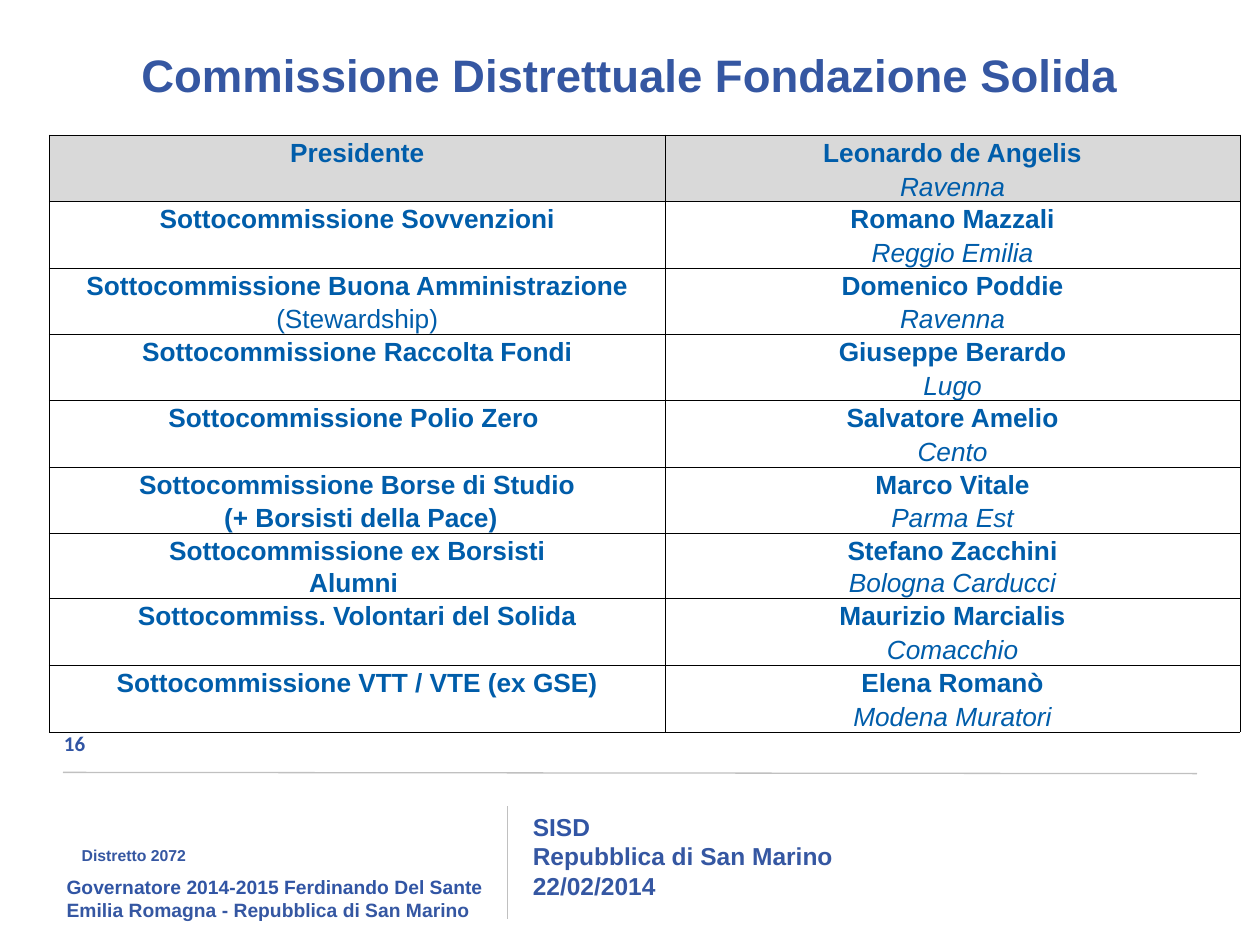
from dataclasses import dataclass

from lxml import etree
from pptx import Presentation
from pptx.dml.color import RGBColor
from pptx.enum.shapes import MSO_CONNECTOR
from pptx.enum.text import MSO_ANCHOR, PP_ALIGN
from pptx.oxml.ns import qn
from pptx.util import Inches, Pt

STRAIGHT = MSO_CONNECTOR.STRAIGHT
TOP, MIDDLE, BOTTOM = MSO_ANCHOR.TOP, MSO_ANCHOR.MIDDLE, MSO_ANCHOR.BOTTOM
CENTER = PP_ALIGN.CENTER

TITLE_BLUE = RGBColor(0x35, 0x57, 0xA2)
FOOTER_BLUE = RGBColor(0x31, 0x55, 0xA4)
TABLE_BLUE = RGBColor(0x00, 0x5D, 0xAA)
HEADER_GRAY = RGBColor(0xD9, 0xD9, 0xD9)
RULE_GRAY = RGBColor(0xC0, 0xC0, 0xC0)
WHITE = RGBColor(0xFF, 0xFF, 0xFF)
BLACK = RGBColor(0x00, 0x00, 0x00)

BORDER_WIDTH = Pt(0.23)
ROW_HEIGHT = Inches(0.26)
COLUMN_WIDTHS = (Inches(4.89), Inches(4.56))


@dataclass(frozen=True)
class Office:
    name: str
    holder: str
    club: str
    detail: str = ""
    detail_bold: bool = True


@dataclass(frozen=True)
class FooterText:
    lines: tuple[tuple[str, RGBColor], ...]
    left: float
    top: float
    width: float
    height: float
    size: float
    font: str = "Arial"
    anchor: MSO_ANCHOR = TOP


OFFICES = (
    Office("Presidente", "Leonardo de Angelis", "Ravenna"),
    Office("Sottocommissione Sovvenzioni", "Romano Mazzali", "Reggio Emilia"),
    Office("Sottocommissione Buona Amministrazione", "Domenico Poddie", "Ravenna",
           "(Stewardship)", False),
    Office("Sottocommissione Raccolta Fondi", "Giuseppe Berardo", "Lugo"),
    Office("Sottocommissione Polio Zero ", "Salvatore Amelio", "Cento"),
    Office("Sottocommissione Borse di Studio", "Marco Vitale", "Parma Est",
           " (+ Borsisti della Pace)"),
    Office("Sottocommissione ex Borsisti", "Stefano Zacchini", "Bologna Carducci", "Alumni "),
    Office("Sottocommiss. Volontari del Solida", "Maurizio Marcialis", "Comacchio"),
    Office("Sottocommissione VTT / VTE (ex GSE)", "Elena Romanò", "Modena Muratori"),
)

FOOTER_TEXTS = (
    FooterText((("16", FOOTER_BLUE),), 0.41, 5.7, 2.33, 0.4, 12, "Calibri", MIDDLE),
    FooterText((("SISD", FOOTER_BLUE), ("Repubblica di San Marino", TITLE_BLUE),
                ("22/02/2014", TITLE_BLUE)),
               4.13, 6.35, 4.18, 0.89, 14, anchor=MIDDLE),
    FooterText((("Governatore 2014-2015 Ferdinando Del Sante", FOOTER_BLUE),
                ("Emilia Romagna - Repubblica di San Marino", TITLE_BLUE)),
               0.43, 6.9, 3.94, 0.55, 11),
    FooterText((("Distretto 2072", TITLE_BLUE),), 0.55, 6.66, 1.6, 0.3, 9),
)


def set_font(font, name: str, size: float, color: RGBColor,
             bold: bool = True, italic: bool = False) -> None:
    font.name, font.size = name, Pt(size)
    font.bold, font.italic = bold, italic
    font.color.rgb = color


def add_footer_text(slide, item: FooterText) -> None:
    box = slide.shapes.add_textbox(Inches(item.left), Inches(item.top),
                                   Inches(item.width), Inches(item.height))
    frame = box.text_frame
    frame.word_wrap = True
    frame.vertical_anchor = item.anchor
    for index, (text, color) in enumerate(item.lines):
        para = frame.add_paragraph() if index else frame.paragraphs[0]
        para.text = text
        set_font(para.font, item.font, item.size, color)


def add_rule(slide, start: tuple[float, float], end: tuple[float, float]) -> None:
    rule = slide.shapes.add_connector(STRAIGHT, *map(Inches, start + end))
    rule.line.color.rgb = RULE_GRAY
    rule.line.width = Pt(0.75)
    etree.SubElement(rule._element.spPr, qn("a:effectLst"))


def set_borders(cell, hidden_side: str) -> None:
    """Outline a cell on every side but one; call before filling the cell."""
    properties = cell._tc.get_or_add_tcPr()
    for side in ("lnL", "lnR", "lnT", "lnB"):
        line = etree.SubElement(properties, qn(f"a:{side}"), w=str(BORDER_WIDTH))
        if side == hidden_side:
            etree.SubElement(line, qn("a:noFill"))
        else:
            fill = etree.SubElement(line, qn("a:solidFill"))
            etree.SubElement(fill, qn("a:srgbClr"), val=str(BLACK))


def fill_cell(cell, text: str, fill: RGBColor, hidden_side: str,
              bold: bool = True, italic: bool = False) -> None:
    set_borders(cell, hidden_side)
    cell.fill.solid()
    cell.fill.fore_color.rgb = fill
    cell.vertical_anchor = BOTTOM
    cell.margin_left = cell.margin_right = Inches(0.01)
    cell.margin_top, cell.margin_bottom = Inches(0.02), 0
    para = cell.text_frame.paragraphs[0]
    para.alignment = CENTER
    para.line_spacing = 0.93
    if text:
        para.text = text
        set_font(para.font, "Arial", 15, TABLE_BLUE, bold, italic)
    else:
        # An empty cell takes its line height from the end-of-paragraph font.
        end = etree.SubElement(para._p, qn("a:endParaRPr"), sz="1500")
        etree.SubElement(end, qn("a:latin"), typeface="Arial")


def add_office_table(slide) -> None:
    row_count = 2 * len(OFFICES)
    table = slide.shapes.add_table(row_count, 2, Inches(0.39), Inches(1.07),
                                   sum(COLUMN_WIDTHS), row_count * ROW_HEIGHT).table
    table.horz_banding = table.first_row = False
    for column, width in zip(table.columns, COLUMN_WIDTHS):
        column.width = width
    for row in table.rows:
        row.height = ROW_HEIGHT
    for index, office in enumerate(OFFICES):
        upper, lower = 2 * index, 2 * index + 1
        fill = WHITE if index else HEADER_GRAY
        fill_cell(table.cell(upper, 0), office.name, fill, "lnB")
        fill_cell(table.cell(upper, 1), office.holder, fill, "lnB")
        fill_cell(table.cell(lower, 0), office.detail, fill, "lnT", office.detail_bold)
        fill_cell(table.cell(lower, 1), office.club, fill, "lnT", bold=False, italic=True)


def add_title(slide, text: str) -> None:
    title = slide.shapes.title
    title.left, title.top = 0, Inches(0.32)
    title.width, title.height = Inches(10), Inches(0.54)
    frame = title.text_frame
    frame.vertical_anchor = MIDDLE
    para = frame.paragraphs[0]
    para.text = text
    para.alignment = CENTER
    set_font(para.font, "Arial", 26, TITLE_BLUE)


def main() -> None:
    deck = Presentation()
    deck.slide_width, deck.slide_height = Inches(10), Inches(7.5)
    slide = deck.slides.add_slide(deck.slide_layouts[5])
    add_title(slide, "Commissione Distrettuale Fondazione Solida")
    for item in FOOTER_TEXTS:
        add_footer_text(slide, item)
    add_rule(slide, (4.03, 7.29), (4.03, 6.4))
    add_rule(slide, (0.5, 6.13), (9.5, 6.14))
    add_office_table(slide)
    deck.save("out.pptx")


if __name__ == "__main__":
    main()
